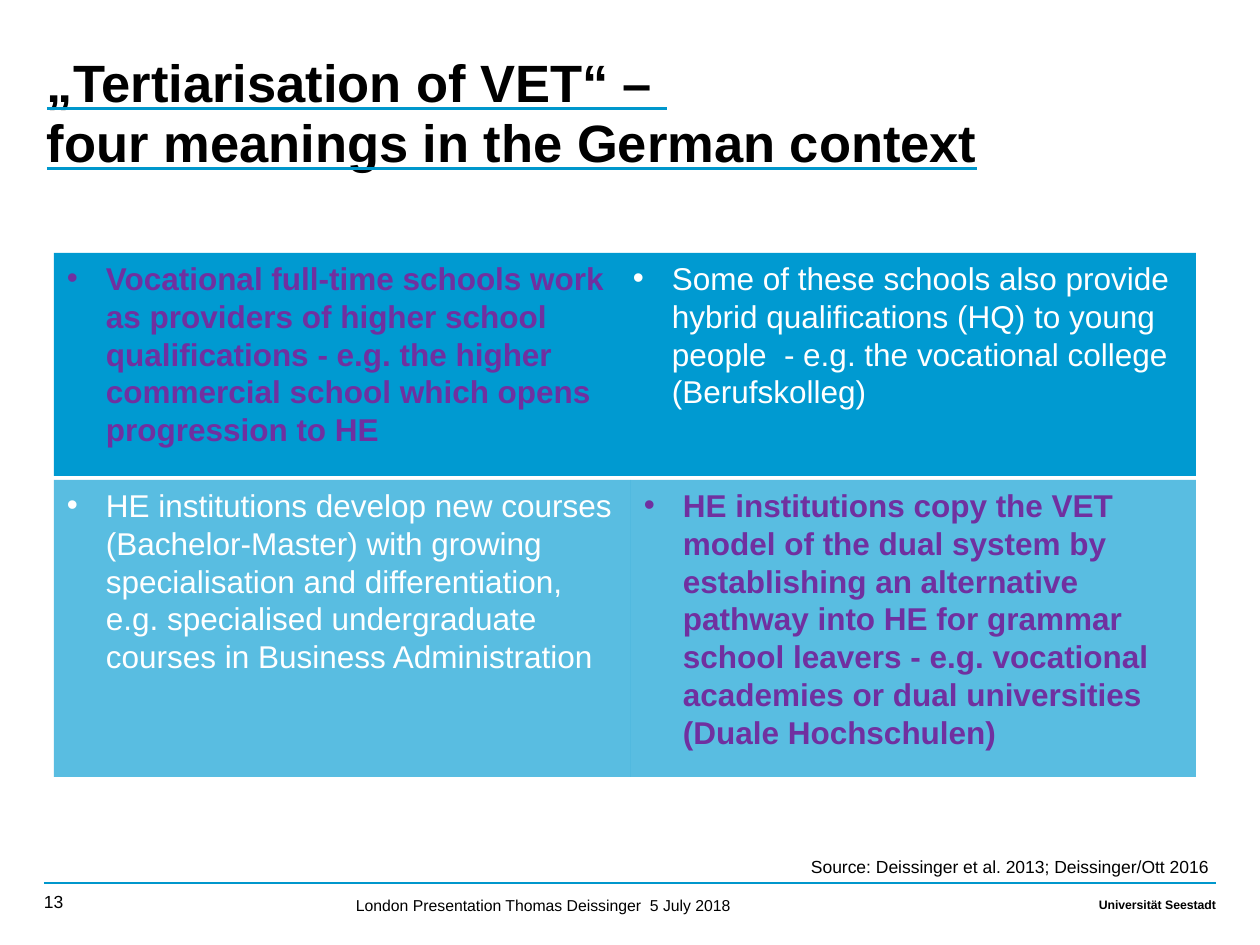
from lxml import etree
from pptx import Presentation
from pptx.dml.color import RGBColor
from pptx.enum.shapes import MSO_CONNECTOR, MSO_SHAPE
from pptx.enum.text import MSO_ANCHOR, MSO_AUTO_SIZE, PP_ALIGN
from pptx.oxml.ns import qn
from pptx.util import Pt

LEFT, RIGHT = PP_ALIGN.LEFT, PP_ALIGN.RIGHT
TOP, BOTTOM = MSO_ANCHOR.TOP, MSO_ANCHOR.BOTTOM
NO_AUTOFIT = MSO_AUTO_SIZE.NONE
RECTANGLE = MSO_SHAPE.RECTANGLE
STRAIGHT = MSO_CONNECTOR.STRAIGHT

BLACK = RGBColor(0x00, 0x00, 0x00)
WHITE = RGBColor(0xFF, 0xFF, 0xFF)
PURPLE = RGBColor(0x70, 0x30, 0xA0)
BLUE = RGBColor(0x00, 0x9A, 0xD1)
RULE_BLUE = RGBColor(0x00, 0x97, 0xCC)

EMU_PER_PX = 914400 / 126
TITLE_ONLY = 5
DEFAULT_INSETS = (13, 6, 13, 6)
FOOTER_INSETS = (0, 0, 0, 8)


def px(n):
    return round(n * EMU_PER_PX)


class SlideBuilder:
    font = "Arial"

    def __init__(self, prs):
        self.s = prs.slides.add_slide(prs.slide_layouts[TITLE_ONLY])

    def frame(self, sp, insets=DEFAULT_INSETS, anchor=TOP):
        tf = sp.text_frame
        tf.word_wrap = True
        tf.auto_size = NO_AUTOFIT
        tf.vertical_anchor = anchor
        (tf.margin_left, tf.margin_top,
         tf.margin_right, tf.margin_bottom) = map(px, insets)
        return tf

    def add_lines(self, p, lines, size, color=BLACK, bold=False, align=LEFT):
        """Add one run per line, separated by line breaks."""
        p.alignment = align
        for i, line in enumerate(lines):
            if i:
                p.add_line_break()
            r = p.add_run()
            r.text = line
            r.font.name = self.font
            r.font.size = Pt(size)
            r.font.bold = bold
            r.font.color.rgb = color

    def title(self, box, lines, size):
        sp = self.s.shapes.title
        sp.left, sp.top, sp.width, sp.height = map(px, box)
        p = self.frame(sp, (0, 0, 0, 0)).paragraphs[0]
        p.line_spacing = 0.95
        self.add_lines(p, lines, size, bold=True)
        for r in p.runs:
            r.font.underline = True
            underline = etree.Element(qn("a:uFill"))
            fill = etree.SubElement(underline, qn("a:solidFill"))
            etree.SubElement(fill, qn("a:srgbClr"), val=str(RULE_BLUE))
            r.font._element.find(qn("a:latin")).addprevious(underline)

    def text(self, box, line, size, insets=DEFAULT_INSETS, anchor=TOP, **style):
        sp = self.s.shapes.add_textbox(*map(px, box))
        p = self.frame(sp, insets, anchor).paragraphs[0]
        self.add_lines(p, [line], size, **style)

    def panel(self, box, lines, opacity, **style):
        """Draw a filled rectangle holding one bulleted paragraph."""
        sp = self.s.shapes.add_shape(RECTANGLE, *map(px, box))
        sp.shadow.inherit = False
        sp.line.fill.background()
        sp.fill.solid()
        sp.fill.fore_color.rgb = BLUE
        if opacity < 100:
            clr = sp._element.spPr.find(qn("a:solidFill"))[0]
            etree.SubElement(clr, qn("a:alpha"), val=str(opacity * 1000))
        p = self.frame(sp).paragraphs[0]
        self.add_lines(p, lines, 18, **style)
        pPr = p._p.get_or_add_pPr()
        pPr.set("marL", str(px(39)))
        pPr.set("indent", str(px(-39)))
        etree.SubElement(pPr, qn("a:buFont"), typeface=self.font)
        etree.SubElement(pPr, qn("a:buChar"), char="•")

    def rule(self, x1, x2, y):
        line = self.s.shapes.add_connector(STRAIGHT, px(x1), px(y), px(x2), px(y))
        line.line.color.rgb = RULE_BLUE
        line.line.width = Pt(1)
        etree.SubElement(line._element.spPr, qn("a:effectLst"))


def main():
    prs = Presentation()
    prs.slide_width, prs.slide_height = px(1260), px(945)
    slide = SlideBuilder(prs)

    slide.title((47, 55, 1159, 110),
                ["„Tertiarisation of VET“ – ", "four meanings in the German context"], 30)

    plain = {"color": WHITE}
    strong = {"color": PURPLE, "bold": True}
    left, right = 54, 1196
    # Each row: top, height, x of the column boundary, opacity, two cells
    rows = [
        (253, 223, 620, 100,
         (["Vocational full-time schools work as providers of higher school "
           "qualifications - e.g. the higher commercial school which opens "
           "progression to HE"], strong),
         (["Some of these schools also provide hybrid qualifications (HQ) to "
           "young people  - e.g. the vocational college (Berufskolleg)"], plain)),
        (480, 297, 631, 65,
         (["HE institutions develop new courses (Bachelor-Master) with growing "
           "specialisation and differentiation, e.g. specialised undergraduate "
           "courses in Business Administration"], plain),
         (["HE institutions copy the VET ",
           "model of the dual system by establishing an alternative pathway "
           "into HE for grammar school leavers - e.g. vocational academies or "
           "dual universities (Duale Hochschulen)"], strong)),
    ]
    for top, height, split, opacity, *cells in rows:
        spans = [(left, split), (split, right)]
        for (x1, x2), (lines, style) in zip(spans, cells):
            slide.panel((x1, top, x2 - x1, height), lines, opacity, **style)

    slide.text((113, 850, 1113, 55),
               "Source: Deissinger et al. 2013; Deissinger/Ott 2016 ", 10, align=RIGHT)
    slide.rule(44, 1216, 883)
    slide.text((44, 890, 129, 30), "13", 10, FOOTER_INSETS, BOTTOM)
    slide.text((343, 890, 586, 30),
               "London Presentation Thomas Deissinger  5 July 2018", 9)
    slide.text((789, 890, 427, 30), "Universität Seestadt", 7,
               FOOTER_INSETS, BOTTOM, bold=True, align=RIGHT)

    prs.save("out.pptx")


if __name__ == "__main__":
    main()
